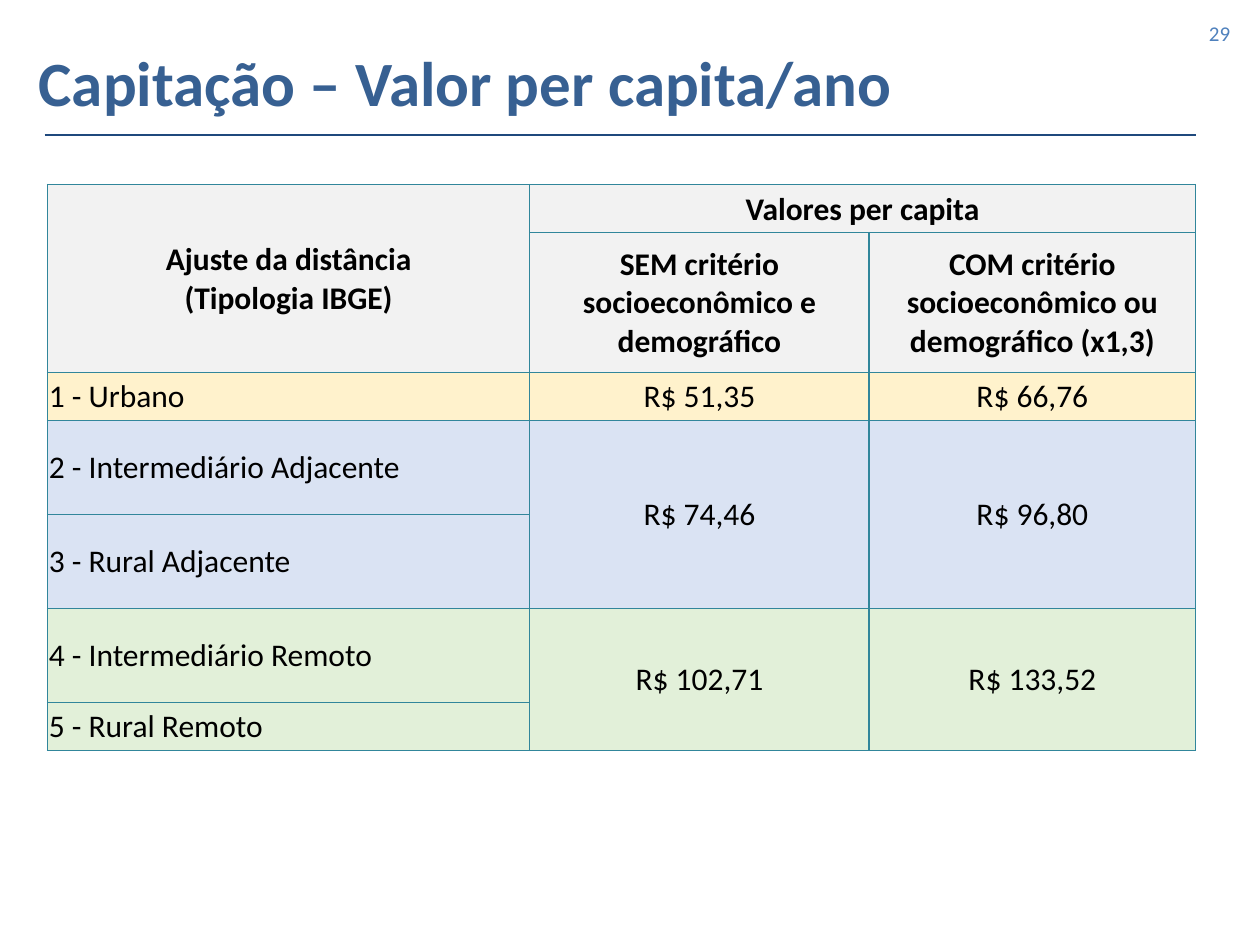
from lxml import etree
from pptx import Presentation
from pptx.dml.color import RGBColor
from pptx.enum.shapes import MSO_CONNECTOR
from pptx.enum.text import MSO_ANCHOR as Anchor, PP_ALIGN as Align
from pptx.oxml.ns import qn
from pptx.util import Pt


def color(hex_string):
    return RGBColor.from_string(hex_string)


def add_text(paragraph, text, size, hex_string, align, bold=False):
    paragraph.alignment = align
    run = paragraph.add_run()
    run.text = text
    run.font.name = "Calibri"
    run.font.size = Pt(size)
    run.font.bold = bold
    run.font.color.rgb = color(hex_string)


prs = Presentation()
prs.slide_width, prs.slide_height = Pt(720), Pt(540)
slide = prs.slides.add_slide(prs.slide_layouts[6])

# Title and page number
for box, text, size, ink, align, bold, spacing in [
    ((15, 21, 669, 56), "Capitação – Valor per capita/ano", 36, "376092", Align.LEFT, True, 0.9),
    ((542, 4.5, 168, 28.5), "29", 12, "4F81BD", Align.RIGHT, False, 1),
]:
    frame = slide.shapes.add_textbox(*map(Pt, box)).text_frame
    frame.word_wrap = True
    frame.vertical_anchor = Anchor.MIDDLE
    frame.paragraphs[0].line_spacing = spacing
    add_text(frame.paragraphs[0], text, size, ink, align, bold)

# Rule under the title
rule = slide.shapes.add_connector(MSO_CONNECTOR.STRAIGHT, Pt(25.5), Pt(77), Pt(683.5), Pt(77))
rule.line.color.rgb = color("1F497D")
rule.line.width = Pt(1)
etree.SubElement(rule._element.spPr, qn("a:effectLst"))

# Per capita values: None marks a place covered by a merged cell
HEADER, URBAN, ADJACENT, REMOTE = "F2F2F2", "FFF2CC", "DAE3F3", "E2F0D9"
rows = [
    (27.4, HEADER, ["Ajuste da distância\n(Tipologia IBGE)", "Valores per capita", None]),
    (80, HEADER, [None, "SEM critério socioeconômico e demográfico",
                  "COM critério socioeconômico ou demográfico (x1,3)"]),
    (27.4, URBAN, ["1 - Urbano", "R$ 51,35", "R$ 66,76"]),
    (53.7, ADJACENT, ["2 - Intermediário Adjacente", "R$ 74,46", "R$ 96,80"]),
    (53.7, ADJACENT, ["3 - Rural Adjacente", None, None]),
    (53.7, REMOTE, ["4 - Intermediário Remoto", "R$ 102,71", "R$ 133,52"]),
    (27.4, REMOTE, ["5 - Rural Remoto", None, None]),
]
widths = [275.5, 194, 186.5]
table = slide.shapes.add_table(
    len(rows), len(widths), Pt(27.2), Pt(105.5),
    Pt(sum(widths)), Pt(sum(height for height, _, _ in rows))).table
table.first_row = table.horz_banding = False
for column, width in zip(table.columns, widths):
    column.width = Pt(width)

for r, (height, fill, texts) in enumerate(rows):
    table.rows[r].height = Pt(height)
    for c, text in enumerate(texts):
        cell = table.cell(r, c)
        cell.margin_left = cell.margin_right = cell.margin_top = Pt(0.7)
        cell.margin_bottom = 0
        cell.vertical_anchor = Anchor.MIDDLE

        # Borders come before the fill in the cell properties
        for side in ("a:lnL", "a:lnR", "a:lnT", "a:lnB"):
            border = etree.SubElement(cell._tc.get_or_add_tcPr(), qn(side), w=str(Pt(1)))
            solid = etree.SubElement(border, qn("a:solidFill"))
            etree.SubElement(solid, qn("a:srgbClr"), val="31869B")
        cell.fill.solid()
        cell.fill.fore_color.rgb = color(fill)

        if text is None:
            continue
        is_header = fill == HEADER
        align = Align.CENTER if is_header or c > 0 else Align.LEFT
        for i, line in enumerate(text.split("\n")):
            frame = cell.text_frame
            paragraph = frame.add_paragraph() if i else frame.paragraphs[0]
            add_text(paragraph, line, 18, "000000", align, is_header)

# Merged cells, from first to last corner
for first, last in [((0, 0), (1, 0)), ((0, 1), (0, 2)),
                    ((3, 1), (4, 1)), ((3, 2), (4, 2)),
                    ((5, 1), (6, 1)), ((5, 2), (6, 2))]:
    table.cell(*first).merge(table.cell(*last))

prs.save("out.pptx")
